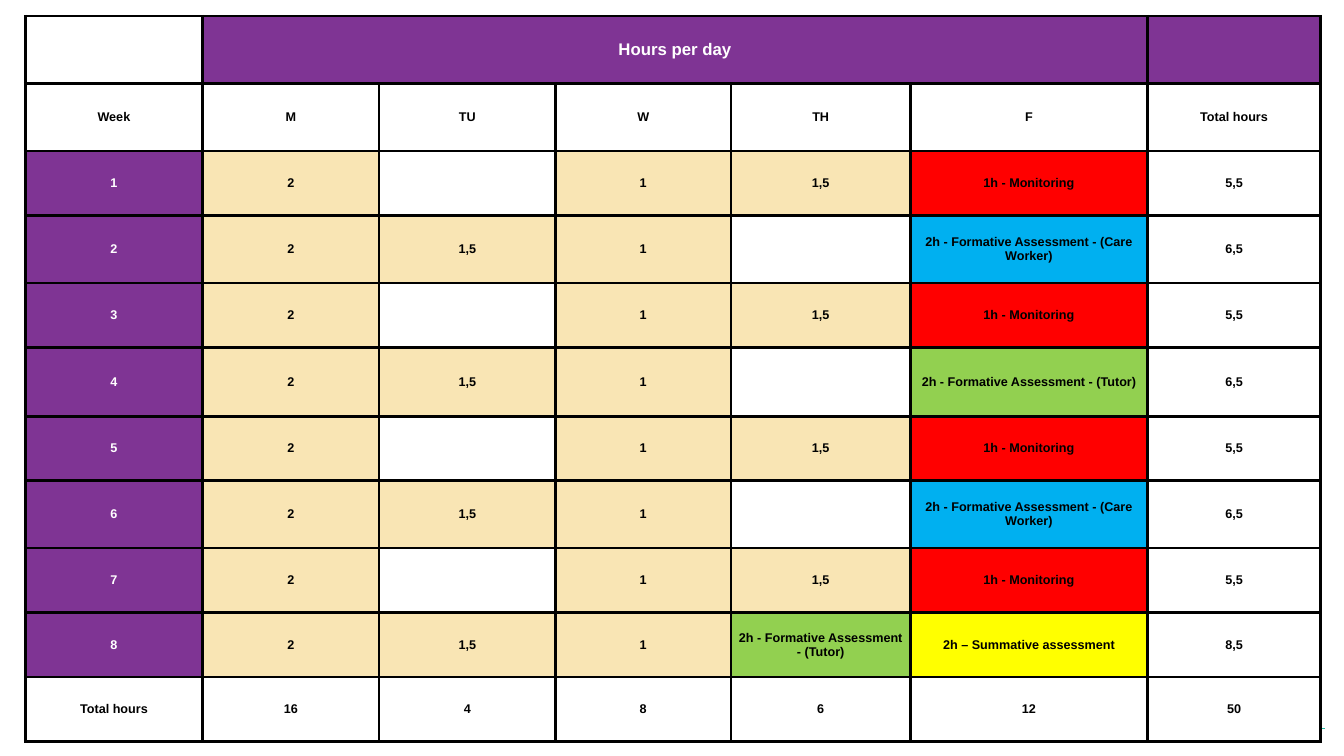
from dataclasses import dataclass
from lxml import etree
from pptx import Presentation
from pptx import util as u
from pptx.dml.color import RGBColor
from pptx.enum import shapes, text
from pptx.oxml import parse_xml
from pptx.oxml.ns import nsdecls, qn


@dataclass
class Theme:
    font: str = "Arial"
    head: int = 12
    body: int = 9
    rule: float = 2.25
    white: str = "FFFFFF"
    black: str = "000000"
    purple: str = "7F3494"
    cream: str = "F9E5B4"
    red: str = "FF0000"
    blue: str = "00B0F0"
    green: str = "92D050"
    yellow: str = "FFFF00"
    teal: str = "24BAA2"


class Page:
    def __init__(self, deck, theme):
        self.theme = theme
        self.slide = deck.slides.add_slide(deck.slide_layouts[6])

    def line(self, start, end, color, width):
        ends = [u.Inches(n) for n in (*start, *end)]
        line = self.slide.shapes.add_connector(shapes.MSO_CONNECTOR.STRAIGHT, *ends)
        line.line.color.rgb = RGBColor.from_string(color)
        line.line.width = u.Pt(width)
        etree.SubElement(line._element.spPr, qn("a:effectLst"))

    def grid(self, left, top, widths, heights):
        """Add an unstyled table with the given column widths and row heights."""
        box = [u.Inches(n) for n in (left, top, sum(widths), sum(heights))]
        table = self.slide.shapes.add_table(len(heights), len(widths), *box).table
        table.first_row = table.horz_banding = False
        for col, width in zip(table.columns, widths):
            col.width = u.Inches(width)
        for row, height in zip(table.rows, heights):
            row.height = u.Inches(height)
        return table

    def edge(self, cell):
        """Draw the four borders of a cell."""
        props = cell._tc.get_or_add_tcPr()
        for side in "LRTB":
            props.append(parse_xml(
                f'<a:ln{side} {nsdecls("a")} w="{u.Pt(self.theme.rule)}"><a:solidFill>'
                f'<a:srgbClr val="{self.theme.black}"/></a:solidFill></a:ln{side}>'))

    def cell(self, cell, words, fill, size):
        self.edge(cell)
        cell.fill.solid()
        cell.fill.fore_color.rgb = RGBColor.from_string(fill)
        cell.margin_left = cell.margin_right = u.Inches(0.07)
        cell.margin_top = cell.margin_bottom = 0
        cell.vertical_anchor = text.MSO_ANCHOR.MIDDLE
        cell.text = words
        para = cell.text_frame.paragraphs[0]
        para.alignment = text.PP_ALIGN.CENTER
        font = para.font
        font.name, font.size, font.bold = self.theme.font, u.Pt(size), True
        ink = self.theme.white if fill == self.theme.purple else self.theme.black
        font.color.rgb = RGBColor.from_string(ink)


MONITOR = "1h - Monitoring"
CARE = "2h - Formative Assessment - (Care Worker)"
TUTOR = "2h - Formative Assessment - (Tutor)"
FINAL = "2h – Summative assessment"

WIDTHS = [1.76, 1.75, 1.75, 1.74, 1.78, 2.35, 1.72]
HEIGHTS = [0.67, 0.67, 0.64, 0.67, 0.64, 0.68, 0.64, 0.67, 0.64, 0.64, 0.64]

ODD = ["2", "", "1", "1,5", MONITOR, "5,5"]
WEEKS = [
    ODD, ["2", "1,5", "1", "", CARE, "6,5"],
    ODD, ["2", "1,5", "1", "", TUTOR, "6,5"],
    ODD, ["2", "1,5", "1", "", CARE, "6,5"],
    ODD, ["2", "1,5", "1", TUTOR, FINAL, "8,5"],
]
ROWS = [
    ["", "Hours per day", "", "", "", "", ""],
    ["Week", "M", "TU", "W", "TH", "F", "Total hours"],
    *[[str(n), *week] for n, week in enumerate(WEEKS, 1)],
    ["Total hours", "16", "4", "8", "6", "12", "50"],
]


def shade(theme, row, col, words):
    """Choose a cell's fill from its place and wording."""
    if row == 0:
        return theme.purple if col else theme.white
    if row in (1, len(ROWS) - 1) or col == len(WIDTHS) - 1:
        return theme.white
    if col == 0:
        return theme.purple
    tasks = {"": theme.white, MONITOR: theme.red, CARE: theme.blue,
             TUTOR: theme.green, FINAL: theme.yellow}
    return tasks.get(words, theme.cream)


def main():
    deck = Presentation()
    deck.slide_width, deck.slide_height = u.Inches(13.33), u.Inches(7.5)
    theme = Theme()
    page = Page(deck, theme)
    page.line((13.14, 7.23), (12.89, 7.23), theme.teal, 0.75)
    table = page.grid(0.25, 0.16, WIDTHS, HEIGHTS)
    for r, row in enumerate(ROWS):
        for c, words in enumerate(row):
            size = theme.body if r else theme.head
            page.cell(table.cell(r, c), words, shade(theme, r, c, words), size)
    table.cell(0, 1).merge(table.cell(0, 5))
    deck.save("out.pptx")


if __name__ == "__main__":
    main()
